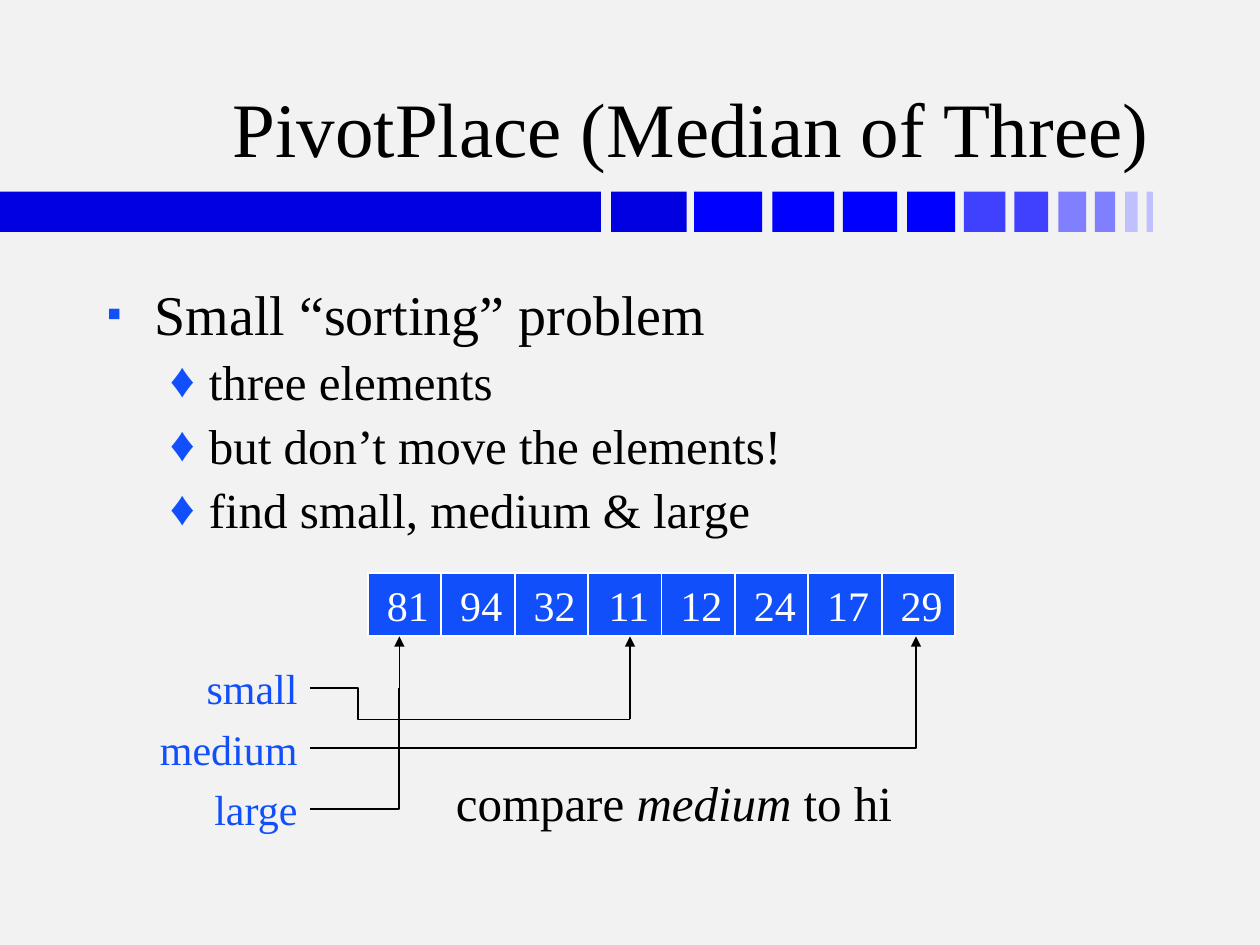
"""Build the median-of-three pivot slide."""
from dataclasses import dataclass
from typing import NamedTuple

import lxml.etree
import pptx
import pptx.dml.color
import pptx.enum.shapes
import pptx.enum.text
import pptx.oxml
import pptx.oxml.ns
import pptx.util

Inches = pptx.util.Inches
Align = pptx.enum.text.PP_ALIGN
Anchor = pptx.enum.text.MSO_ANCHOR
AutoSize = pptx.enum.text.MSO_AUTO_SIZE
ConnectorType = pptx.enum.shapes.MSO_CONNECTOR


@dataclass(frozen=True)
class Theme:
    font: str = "Times New Roman"
    background: str = "F2F2F2"
    ink: str = "000000"
    accent: str = "114FFB"
    white: str = "FFFFFF"
    title: int = 44
    body: int = 32
    detail: int = 28
    small: int = 24
    line: int = 1


THEME = Theme()


class Box(NamedTuple):
    left: float
    top: float
    width: float
    height: float


class Bar(NamedTuple):
    left: float
    width: float
    color: str


class Bullet(NamedTuple):
    text: str
    size: int
    level: int
    indent: float
    hanging: float
    space_percent: int
    symbol: str
    symbol_percent: int


class Pointer(NamedTuple):
    label: str
    width: float
    target: float
    turn: float
    bend: float


BARS = [
    Bar(0, 4.77, "0000E0"), Bar(4.85, 0.6, "0000E0"),
    Bar(5.51, 0.54, "0000FF"), Bar(6.13, 0.49, "0000FF"),
    Bar(6.69, 0.43, "0000FF"), Bar(7.2, 0.38, "0000FF"),
    Bar(7.65, 0.33, "4040FF"), Bar(8.05, 0.27, "4040FF"),
    Bar(8.4, 0.22, "8080FF"), Bar(8.69, 0.16, "8080FF"),
    Bar(8.93, 0.1, "C0C0FF"), Bar(9.1, 0.05, "C0C0FF"),
]
BULLETS = [Bullet("Small “sorting” problem", THEME.body, 0, 0.38, 0.38, 20, "▪", 75)] + [
    Bullet(text, THEME.detail, 1, 0.81, 0.31, 10, "♦", 100)
    for text in ("three elements", "but don’t move the elements!", "find small, medium & large")
]
VALUES = [81, 94, 32, 11, 12, 24, 17, 29]
CELLS = Box(2.92, 4.55, 4.66, 0.5)
POINTERS = [
    Pointer("small", 0.92, 5, 5.71, 0.15),
    Pointer("medium", 1.29, 7.27, 5.46, 1),
    Pointer("large", 0.87, 3.17, 5.46, 1),
]
LABEL_RIGHT, LABEL_TOP, LABEL_STEP, LABEL_HEIGHT = 2.46, 5.21, 0.48, 0.5


def rgb(color: str) -> pptx.dml.color.RGBColor:
    return pptx.dml.color.RGBColor.from_string(color)


def set_values(target, values: dict) -> None:
    for name, value in values.items():
        setattr(target, name, value)


def add_run(paragraph, text: str, size: int, color: str, italic: bool = False) -> None:
    run = paragraph.add_run()
    run.text = text
    set_values(run.font, {"name": THEME.font, "size": pptx.util.Pt(size), "italic": italic})
    run.font.color.rgb = rgb(color)


def add_rectangle(slide, box: Box, color: str):
    shape = slide.shapes.add_shape(pptx.enum.shapes.MSO_SHAPE.RECTANGLE, *map(Inches, box))
    shape.shadow.inherit = False
    shape.fill.solid()
    shape.fill.fore_color.rgb = rgb(color)
    shape.line.fill.background()
    return shape


def add_text_frame(slide, box: Box, frame_format: dict):
    frame = slide.shapes.add_textbox(*map(Inches, box)).text_frame
    set_values(frame, frame_format)
    return frame


def add_bullet(paragraph, bullet: Bullet) -> None:
    paragraph.level = bullet.level
    properties = paragraph._p.get_or_add_pPr()
    properties.set("marL", str(Inches(bullet.indent)))
    properties.set("indent", str(-Inches(bullet.hanging)))
    namespace = pptx.oxml.ns.nsdecls("a")
    for markup in (
        f'<a:spcBef {namespace}><a:spcPct val="{bullet.space_percent * 1000}"/></a:spcBef>',
        f'<a:buClr {namespace}><a:srgbClr val="{THEME.accent}"/></a:buClr>',
        f'<a:buSzPct {namespace} val="{bullet.symbol_percent * 1000}"/>',
        f'<a:buFont {namespace} typeface="{THEME.font}"/>',
        f'<a:buChar {namespace} char="{bullet.symbol}"/>',
    ):
        properties.append(pptx.oxml.parse_xml(markup))
    add_run(paragraph, bullet.text, bullet.size, THEME.ink)


def add_cell(slide, box: Box, value: int) -> None:
    shape = add_rectangle(slide, box, THEME.accent)
    shape.line.color.rgb = rgb(THEME.white)
    shape.line.width = pptx.util.Pt(THEME.line)
    set_values(shape.text_frame, {"word_wrap": False, "vertical_anchor": Anchor.MIDDLE})
    paragraph = shape.text_frame.paragraphs[0]
    paragraph.alignment = Align.RIGHT
    add_run(paragraph, str(value), THEME.small, THEME.white)


def add_line(slide, kind, start: tuple[float, float], end: tuple[float, float]):
    connector = slide.shapes.add_connector(kind, *map(Inches, (*start, *end)))
    connector.line.color.rgb = rgb(THEME.ink)
    connector.line.width = pptx.util.Pt(THEME.line)
    lxml.etree.SubElement(connector._element.spPr, pptx.oxml.ns.qn("a:effectLst"))
    return connector


def add_pointer(slide, pointer: Pointer, top: float) -> None:
    box = Box(LABEL_RIGHT - pointer.width, top, pointer.width, LABEL_HEIGHT)
    frame = add_text_frame(slide, box, {"word_wrap": False, "auto_size": AutoSize.SHAPE_TO_FIT_TEXT})
    frame.paragraphs[0].alignment = Align.RIGHT
    add_run(frame.paragraphs[0], pointer.label, THEME.small, THEME.accent)
    start = (LABEL_RIGHT, top + LABEL_HEIGHT / 2)
    corner = (pointer.target, pointer.turn)
    elbow = add_line(slide, ConnectorType.ELBOW, start, corner)
    adjustments = elbow._element.spPr.find(pptx.oxml.ns.qn("a:prstGeom")).get_or_add_avLst()
    guide = lxml.etree.SubElement(adjustments, pptx.oxml.ns.qn("a:gd"))
    guide.set("name", "adj1")
    guide.set("fmla", f"val {round(pointer.bend * 100000)}")
    arrow = add_line(slide, ConnectorType.STRAIGHT, corner, (pointer.target, CELLS.top + CELLS.height))
    tail = lxml.etree.SubElement(arrow.line._get_or_add_ln(), pptx.oxml.ns.qn("a:tailEnd"))
    tail.set("type", "triangle")


def main() -> None:
    presentation = pptx.Presentation()
    set_values(presentation, {"slide_width": Inches(10), "slide_height": Inches(7.5)})
    slide = presentation.slides.add_slide(presentation.slide_layouts[6])
    slide.background.fill.solid()
    slide.background.fill.fore_color.rgb = rgb(THEME.background)

    for bar in BARS:
        add_rectangle(slide, Box(bar.left, 1.52, bar.width, 0.32), bar.color)

    title = add_text_frame(
        slide, Box(0.74, 0.19, 8.48, 1.23), {"word_wrap": True, "vertical_anchor": Anchor.BOTTOM}
    )
    title.paragraphs[0].alignment = Align.RIGHT
    add_run(title.paragraphs[0], "PivotPlace (Median of Three)", THEME.title, THEME.ink)

    body = add_text_frame(slide, Box(0.75, 2.17, 8.5, 4.5), {"word_wrap": True})
    for index, bullet in enumerate(BULLETS):
        add_bullet(body.add_paragraph() if index else body.paragraphs[0], bullet)

    cell_width = CELLS.width / len(VALUES)
    for index, value in enumerate(VALUES):
        box = Box(CELLS.left + index * cell_width, CELLS.top, cell_width, CELLS.height)
        add_cell(slide, box, value)

    for index, pointer in enumerate(POINTERS):
        add_pointer(slide, pointer, LABEL_TOP + index * LABEL_STEP)

    caption = add_text_frame(
        slide, Box(3.52, 6.08, 3.66, 0.57), {"word_wrap": False, "auto_size": AutoSize.SHAPE_TO_FIT_TEXT}
    )
    for text, italic in (("compare ", False), ("medium", True), (" to hi", False)):
        add_run(caption.paragraphs[0], text, THEME.detail, THEME.ink, italic)

    presentation.save("out.pptx")


if __name__ == "__main__":
    main()
